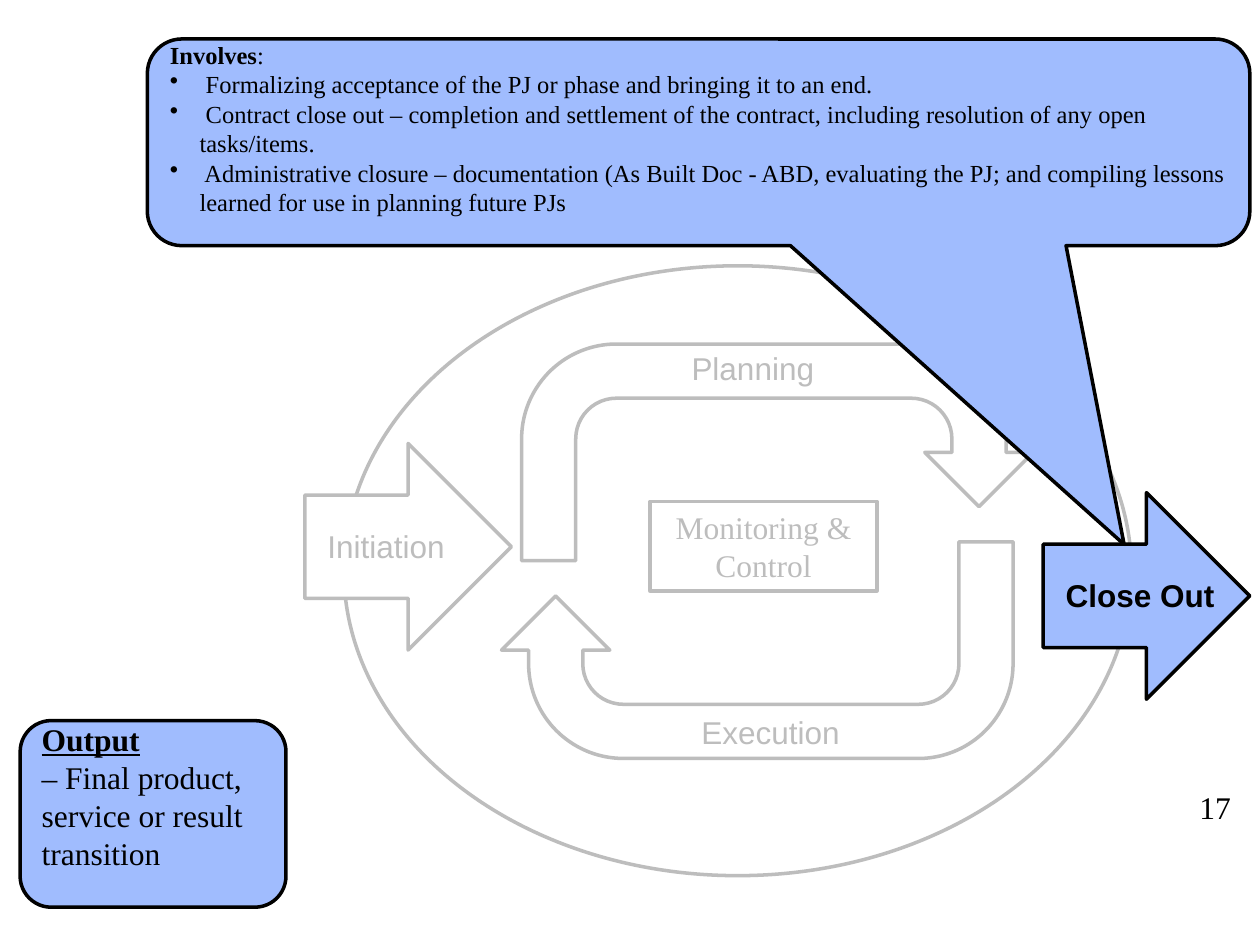
import dataclasses

import pptx
import pptx.dml.color
import pptx.enum.shapes
import pptx.enum.text
import pptx.util
from lxml import etree
from pptx.oxml.ns import qn

Pt = pptx.util.Pt
SHAPE = pptx.enum.shapes.MSO_SHAPE
ANCHOR = pptx.enum.text.MSO_ANCHOR
ALIGN = pptx.enum.text.PP_ALIGN


@dataclasses.dataclass(frozen=True)
class Theme:
    paper: str = "FFFFFF"
    muted: str = "BDBDBD"
    accent: str = "A0BCFE"
    ink: str = "000000"
    serif: str = "Times New Roman"
    sans: str = "Arial"
    text: float = 18
    small: float = 14
    stroke: float = 2


THEME = Theme()


def rgb(value):
    return pptx.dml.color.RGBColor.from_string(value)


def add_shape(s, kind, x, y, w, h, fill=THEME.paper, line=THEME.muted):
    sp = s.shapes.add_shape(kind, Pt(x), Pt(y), Pt(w), Pt(h))
    sp.shadow.inherit = False
    sp.fill.solid()
    sp.fill.fore_color.rgb = rgb(fill)
    sp.line.color.rgb = rgb(line)
    sp.line.width = Pt(THEME.stroke)
    return sp


def add_paragraph(tf, text, size=THEME.text, color=THEME.ink, font=THEME.serif,
                  align=ALIGN.LEFT):
    """Fill the first paragraph if it is empty, otherwise append one."""
    p = tf.paragraphs[0] if not tf.text else tf.add_paragraph()
    p.alignment = align
    p.font.size = Pt(size)
    p.font.name = font
    p.font.color.rgb = rgb(color)
    p.add_run().text = text
    return p


def add_bullet(p, indent):
    pPr = p._p.get_or_add_pPr()
    pPr.set("marL", str(Pt(indent)))
    pPr.set("indent", str(-Pt(indent)))
    bullet = etree.Element(qn("a:buChar"), char="•")
    pPr.insert(0, bullet)


def add_label(s, text, x, y, color=THEME.muted, bold=False):
    tf = s.shapes.add_textbox(Pt(x), Pt(y), Pt(129.6), Pt(28.8)).text_frame
    tf.word_wrap = True
    p = add_paragraph(tf, text, color=color, font=THEME.sans)
    p.font.bold = bold


def panel_text(sp, space_below):
    """Centre the text vertically above a strip left free at the bottom."""
    tf = sp.text_frame
    tf.word_wrap = True
    tf.vertical_anchor = ANCHOR.MIDDLE
    tf.margin_bottom = Pt(3.6 + space_below)
    return tf


def page_number(s, x, y, w, h):
    sp = add_shape(s, SHAPE.DOUBLE_BRACKET, x, y, w, h)
    sp.fill.background()
    sp.line.fill.background()
    sp.text_frame.vertical_anchor = ANCHOR.TOP
    add_paragraph(sp.text_frame, "17")


def process_cycle(s, x, y, w, h):
    add_shape(s, SHAPE.OVAL, x + 22.3, y, 450, h)

    # Planning and execution turn around the centre
    for text, dx, dy, angle, label_dx, label_dy in (
        ("Planning", 123.9, 44.7, 0, 213.9, 43.9),
        ("Execution", 112.4, 157.7, 180, 219.6, 252),
    ):
        turn = add_shape(s, SHAPE.U_TURN_ARROW, x + dx, y + dy, 292.3, 123.8)
        turn.rotation = angle
        add_label(s, text, x + label_dx, y + label_dy)

    # Entry and exit arrows; the exit is the current phase
    side = 118.1
    for text, dx, dy, fill, color, current in (
        ("Initiation", 0, 101.5, THEME.paper, THEME.muted, False),
        ("Close Out", w - side, 129.6, THEME.accent, THEME.ink, True),
    ):
        add_shape(s, SHAPE.RIGHT_ARROW, x + dx, y + dy, side, side, fill, color)
        add_label(s, text, x + dx + 5.8, y + dy + 44, color, current)

    # Centre box
    control = add_shape(s, SHAPE.RECTANGLE, x + 197.3, y + 134.7, 129.6, 51.1)
    control.text_frame.word_wrap = True
    control.text_frame.vertical_anchor = ANCHOR.TOP
    add_paragraph(control.text_frame, "Monitoring & Control",
                  color=THEME.muted, align=ALIGN.CENTER)


def involves_callout(s, x, y, w, h):
    sp = add_shape(s, SHAPE.ROUNDED_RECTANGULAR_CALLOUT, x, y, w, h,
                   THEME.accent, THEME.ink)
    for i, value in enumerate((0.386, 1.946, 0.167)):
        sp.adjustments[i] = value
    tf = panel_text(sp, 16)
    p = add_paragraph(tf, "Involves", THEME.small)
    p.runs[0].font.bold = True
    p.add_run().text = ":"
    for text in (
        " Formalizing acceptance of the PJ or phase and bringing it to an end.",
        " Contract close out – completion and settlement of the contract, "
        "including resolution of any open tasks/items.",
        " Administrative closure – documentation (As Built Doc - ABD, evaluating "
        "the PJ; and compiling lessons learned for use in planning future PJs",
    ):
        add_bullet(add_paragraph(tf, text, THEME.small), 17)


def output_panel(s, x, y, w, h):
    sp = add_shape(s, SHAPE.ROUNDED_RECTANGLE, x, y, w, h,
                   THEME.accent, THEME.ink)
    tf = panel_text(sp, 20.7)
    heading = add_paragraph(tf, "Output")
    heading.font.bold = True
    heading.font.underline = True
    add_paragraph(tf, "– Final product, service or result transition")


def main():
    prs = pptx.Presentation()
    prs.slide_width, prs.slide_height = Pt(720), Pt(540)
    s = prs.slides.add_slide(prs.slide_layouts[6])
    process_cycle(s, 174.2, 151.9, 540, 348.5)
    page_number(s, 676.8, 445, 43.2, 31)
    involves_callout(s, 84.2, 22.3, 630, 118.1)
    output_panel(s, 11.5, 411.8, 151.9, 106.6)
    prs.save("out.pptx")


if __name__ == "__main__":
    main()
